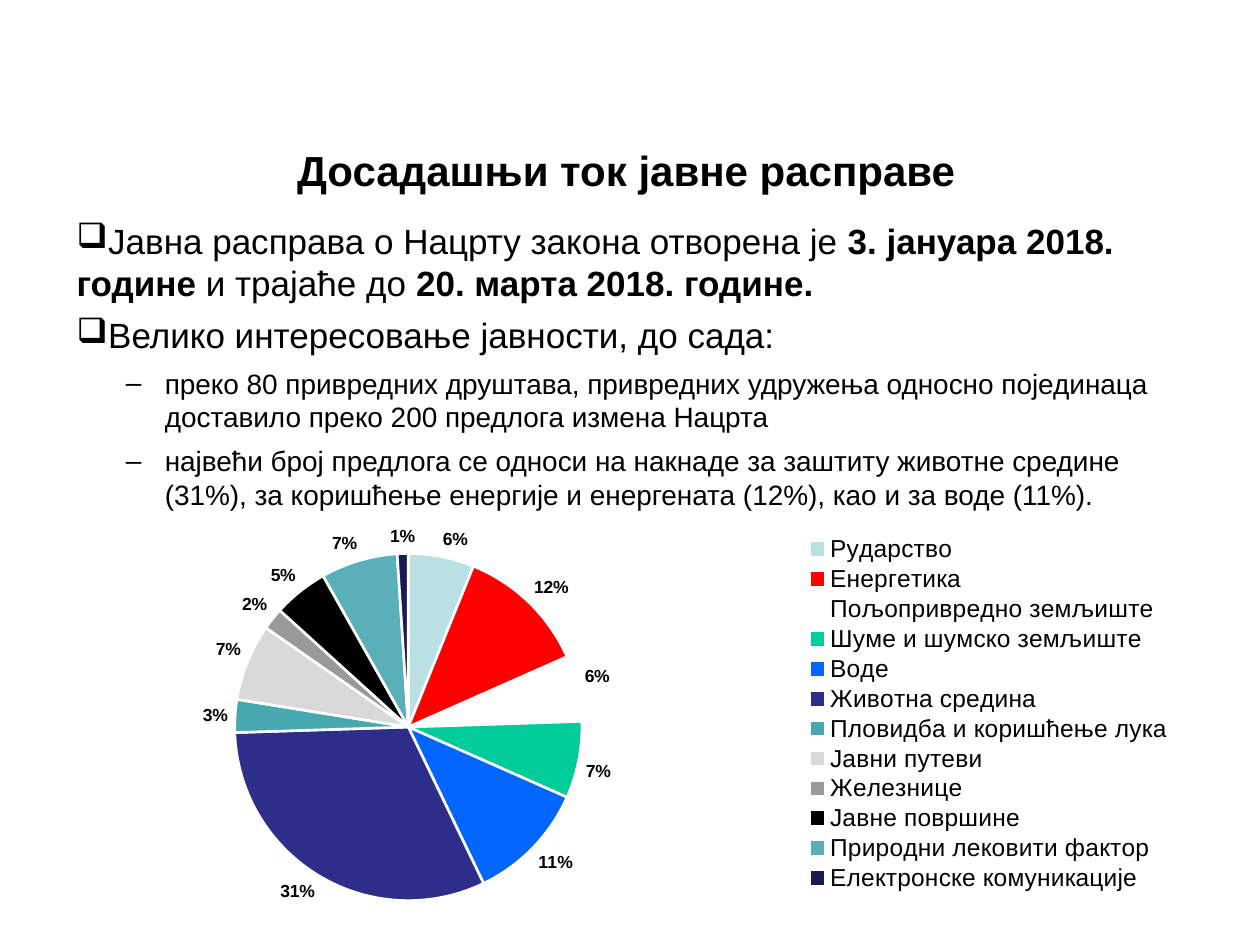
import pptx
import pptx.chart.data
import pptx.dml.color
import pptx.enum.chart
import pptx.enum.text
import pptx.oxml
import pptx.oxml.ns
import pptx.util
from pptx.util import Inches

FONT = "Arial"
COLORS = {"text": "000000", "edge": "FFFFFF"}
TITLE = "Досадашњи ток јавне расправе"

# Text levels: size, margin, indent, bullet ("q" is the box in Wingdings)
LEVELS = [
    {"size": 20, "margin": 0, "indent": -0.38, "bullet": "q", "bullet_font": "Wingdings"},
    {"size": 16, "margin": 0.7, "indent": -0.31, "bullet": "‒", "bullet_font": FONT},
]
# Level, then runs of (text, bold)
POINTS = [
    (0, [("Јавна расправа о Нацрту закона отворена је ", False),
         ("3. јануара 2018. године", True),
         (" и трајаће до ", False),
         ("20. марта 2018. године.", True)]),
    (0, [("Велико интересовање јавности, до сада:", False)]),
    (1, [("преко 80 привредних друштава, привредних удружења односно појединаца "
          "доставило преко 200 предлога измена Нацрта", False)]),
    (1, [("највећи број предлога се односи на накнаде за заштиту животне средине "
          "(31%), за коришћење енергије и енергената (12%), као и за воде (11%).", False)]),
]
# Area, share of proposals in percent, slice colour
SHARES = [
    ("Рударство", 6, "BBE0E3"),
    ("Енергетика", 12, "FF0000"),
    ("Пољопривредно земљиште", 6, "FFFFFF"),
    ("Шуме и шумско земљиште", 7, "00CC99"),
    ("Воде", 11, "0066FF"),
    ("Животна средина", 31, "2D2D8A"),
    ("Пловидба и коришћење лука", 3, "48A8B0"),
    ("Јавни путеви", 7, "D9D9D9"),
    ("Железнице", 2, "999999"),
    ("Јавне површине", 5, "000000"),
    ("Природни лековити фактор", 7, "5AAFB8"),
    ("Електронске комуникације", 1, "1B1B53"),
]
# Fractions of the chart's width and height
PIE_AREA = {"x": 0.12, "y": 0.08, "w": 0.32, "h": 0.92}
LEGEND_AREA = {"x": 0.64, "y": 0.03, "w": 0.35, "h": 0.95}


def rgb(value):
    return pptx.dml.color.RGBColor.from_string(value)


def set_font(font, size, bold=False):
    formats = {"name": FONT, "size": pptx.util.Pt(size), "bold": bold}
    for key, value in formats.items():
        setattr(font, key, value)
    font.color.rgb = rgb(COLORS["text"])


def set_bullet(paragraph, level):
    properties = paragraph._p.get_or_add_pPr()
    properties.set("marL", str(Inches(level["margin"])))
    properties.set("indent", str(Inches(level["indent"])))
    namespace = pptx.oxml.ns.nsdecls("a")
    for element in (f'<a:buFont {namespace} typeface="{level["bullet_font"]}"/>',
                    f'<a:buChar {namespace} char="{level["bullet"]}"/>'):
        properties.append(pptx.oxml.parse_xml(element))


def make_layout(area, target=""):
    modes = "".join(f'<c:{side}Mode val="edge"/>' for side in "xy")
    sizes = "".join(f'<c:{side} val="{value}"/>' for side, value in area.items())
    return pptx.oxml.parse_xml(
        f'<c:layout {pptx.oxml.ns.nsdecls("c")}><c:manualLayout>'
        f'{target}{modes}{sizes}</c:manualLayout></c:layout>')


def remove_layout(parent):
    for automatic in parent.findall(pptx.oxml.ns.qn("c:layout")):
        parent.remove(automatic)


presentation = pptx.Presentation()
presentation.slide_width, presentation.slide_height = Inches(10), Inches(7.5)
slide = presentation.slides.add_slide(presentation.slide_layouts[5])

# Title
title = slide.shapes.title
title.left, title.top, title.width, title.height = map(Inches, (0.51, 0.99, 8.92, 0.71))
title.text_frame.text = TITLE
title.text_frame.vertical_anchor = pptx.enum.text.MSO_ANCHOR.MIDDLE
heading = title.text_frame.paragraphs[0]
heading.alignment = pptx.enum.text.PP_ALIGN.CENTER
set_font(heading.runs[0].font, 24, True)

# Points on the public debate
debate = slide.shapes.add_textbox(*map(Inches, (0.51, 1.69, 9, 2.6))).text_frame
debate.word_wrap = True
for index, (depth, runs) in enumerate(POINTS):
    point = debate.add_paragraph() if index else debate.paragraphs[0]
    level = LEVELS[depth]
    point.level = depth
    point.space_before = pptx.util.Pt(6 if index else 0)
    set_bullet(point, level)
    for text, bold in runs:
        run = point.add_run()
        run.text = text
        set_font(run.font, level["size"], bold)

# Pie of proposals by area
share_data = pptx.chart.data.CategoryChartData(number_format='0"%"')
share_data.categories = [area for area, _, _ in SHARES]
share_data.add_series("Series 1", [share for _, share, _ in SHARES])
pie = slide.shapes.add_chart(
    pptx.enum.chart.XL_CHART_TYPE.PIE,
    *map(Inches, (0.83, 4.14, 8.61, 3.02)), share_data).chart
pie.has_title = False
set_font(pie.font, 10)

plot = pie.plots[0]
plot.vary_by_categories = True
for index, (_, _, color) in enumerate(SHARES):
    slice_format = plot.series[0].points[index].format
    slice_format.fill.solid()
    slice_format.fill.fore_color.rgb = rgb(color)
    slice_format.line.color.rgb = rgb(COLORS["edge"])
    slice_format.line.width = pptx.util.Pt(1.5)

# Share labels
plot.has_data_labels = True
label_formats = {
    "show_value": True,
    "show_percentage": False,
    "number_format": '0"%"',
    "number_format_is_linked": False,
    "position": pptx.enum.chart.XL_LABEL_POSITION.OUTSIDE_END,
}
for key, value in label_formats.items():
    setattr(plot.data_labels, key, value)
set_font(plot.data_labels.font, 10, True)

# Legend in one column
pie.has_legend = True
pie.legend.position = pptx.enum.chart.XL_LEGEND_POSITION.CORNER
pie.legend.include_in_layout = False
set_font(pie.legend.font, 14)
legend = pie.legend._element
remove_layout(legend)
legend.find(pptx.oxml.ns.qn("c:legendPos")).addnext(make_layout(LEGEND_AREA))

# Place of the pie inside the chart
plot_area = pie._chartSpace.chart.plotArea
remove_layout(plot_area)
plot_area.insert(0, make_layout(PIE_AREA, '<c:layoutTarget val="inner"/>'))

presentation.save("out.pptx")
